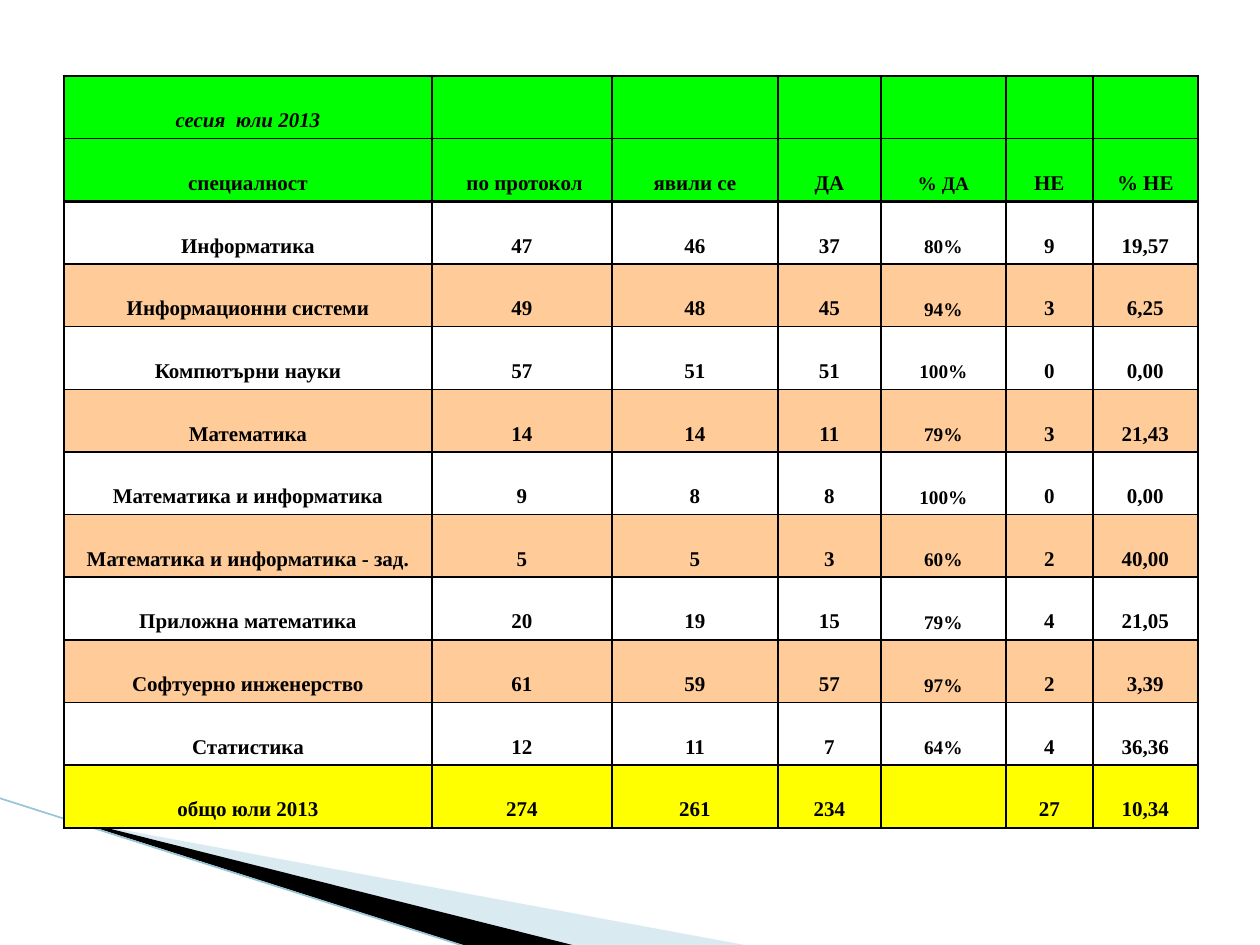
import pptx
import pptx.util
import pptx.dml.color
import pptx.enum.shapes
import pptx.enum.text
import pptx.oxml
import pptx.oxml.ns

PX = 914400 / 126
FONT = "Times New Roman"
HUES = {"head": "00FF00", "band": "FFCC99", "sum": "FFFF00", "ink": "000000",
        "pale": "A0CBDC", "line": "97C5D8"}
COLS = [368, 180, 166, 103, 125, 87, 105]
RATE = 4  # column of the smaller "% ДА" figures
ROWS = [
    ["сесия  юли 2013", "", "", "", "", "", ""],
    ["специалност", " по протокол", "явили се", "ДА", "% ДА", "НЕ", "% НЕ"],
    ["Информатика", "47", "46", "37", "80%", "9", "19,57"],
    ["Информационни системи", "49", "48", "45", "94%", "3", "6,25"],
    ["Компютърни науки", "57", "51", "51", "100%", "0", "0,00"],
    ["Математика", "14", "14", "11", "79%", "3", "21,43"],
    ["Математика и информатика", "9", "8", "8", "100%", "0", "0,00"],
    ["Математика и информатика - зад.", "5", "5", "3", "60%", "2", "40,00"],
    ["Приложна математика", "20", "19", "15", "79%", "4", "21,05"],
    ["Софтуерно инженерство", "61", "59", "57", "97%", "2", "3,39"],
    ["Статистика", "12", "11", "7", "64%", "4", "36,36"],
    ["общо юли 2013", "274", "261", "234", "", "27", "10,34"],
]
LAST = len(ROWS) - 1


def px(n):
    return round(n * PX)


def rgb(key):
    return pptx.dml.color.RGBColor.from_string(HUES[key])


deck = pptx.Presentation()
deck.slide_width, deck.slide_height = px(1260), px(945)
slide = deck.slides.add_slide(deck.slide_layouts[6])
shapes = slide.shapes
ns = pptx.oxml.ns.nsdecls("a")

# Corner wedges and the line along them
wedges = [
    ("pale", [(69, 820), (750, 946), (575, 946), (69, 819)]),
    ("ink", [(67, 818), (576, 946), (469, 947), (68, 819)]),
]
for key, spots in wedges:
    pen = shapes.build_freeform(*spots[0], scale=PX)
    pen.add_line_segments(spots[1:], close=True)
    wedge = pen.convert_to_shape()
    wedge.shadow.inherit = False
    wedge.fill.solid()
    wedge.fill.fore_color.rgb = rgb(key)
    wedge.line.fill.background()
    if key == "pale":
        hue = wedge.fill._xPr.find(".//" + pptx.oxml.ns.qn("a:srgbClr"))
        hue.append(pptx.oxml.parse_xml(f'<a:alpha {ns} val="40000"/>'))

edge = shapes.add_connector(pptx.enum.shapes.MSO_CONNECTOR.STRAIGHT,
                            px(-1), px(798), px(467), px(947))
edge.line.color.rgb = rgb("line")
edge.line.width = pptx.util.Pt(0.95)
edge._element.spPr.append(pptx.oxml.parse_xml(f"<a:effectLst {ns}/>"))

# Results table
frame = shapes.add_table(len(ROWS), len(COLS), px(64), px(76), px(sum(COLS)), px(752))
table = frame.table
table.first_row = table.horz_banding = False
for col, wide in zip(table.columns, COLS):
    col.width = px(wide)

for r, row in enumerate(ROWS):
    if r < 2:
        key = "head"
    elif r == LAST:
        key = "sum"
    else:
        key = "band" if r % 2 else None
    for c, text in enumerate(row):
        cell = table.cell(r, c)
        cell.vertical_anchor = pptx.enum.text.MSO_ANCHOR.BOTTOM
        for side in "LRTB":
            thick = 2 if (r, side) in ((1, "B"), (2, "T")) else 1
            cell._tc.get_or_add_tcPr().append(pptx.oxml.parse_xml(
                f'<a:ln{side} {ns} w="{pptx.util.Pt(thick)}"><a:solidFill>'
                f'<a:srgbClr val="{HUES["ink"]}"/></a:solidFill></a:ln{side}>'))
        if key:
            cell.fill.solid()
            cell.fill.fore_color.rgb = rgb(key)
        else:
            cell.fill.background()
        if not text:
            continue
        cell.text = text
        para = cell.text_frame.paragraphs[0]
        para.alignment = pptx.enum.text.PP_ALIGN.CENTER
        font = para.font
        font.name = FONT
        font.size = pptx.util.Pt(11 if c == RATE else 12)
        font.bold = True
        font.italic = r == 0
        font.color.rgb = rgb("ink")

deck.save("out.pptx")
